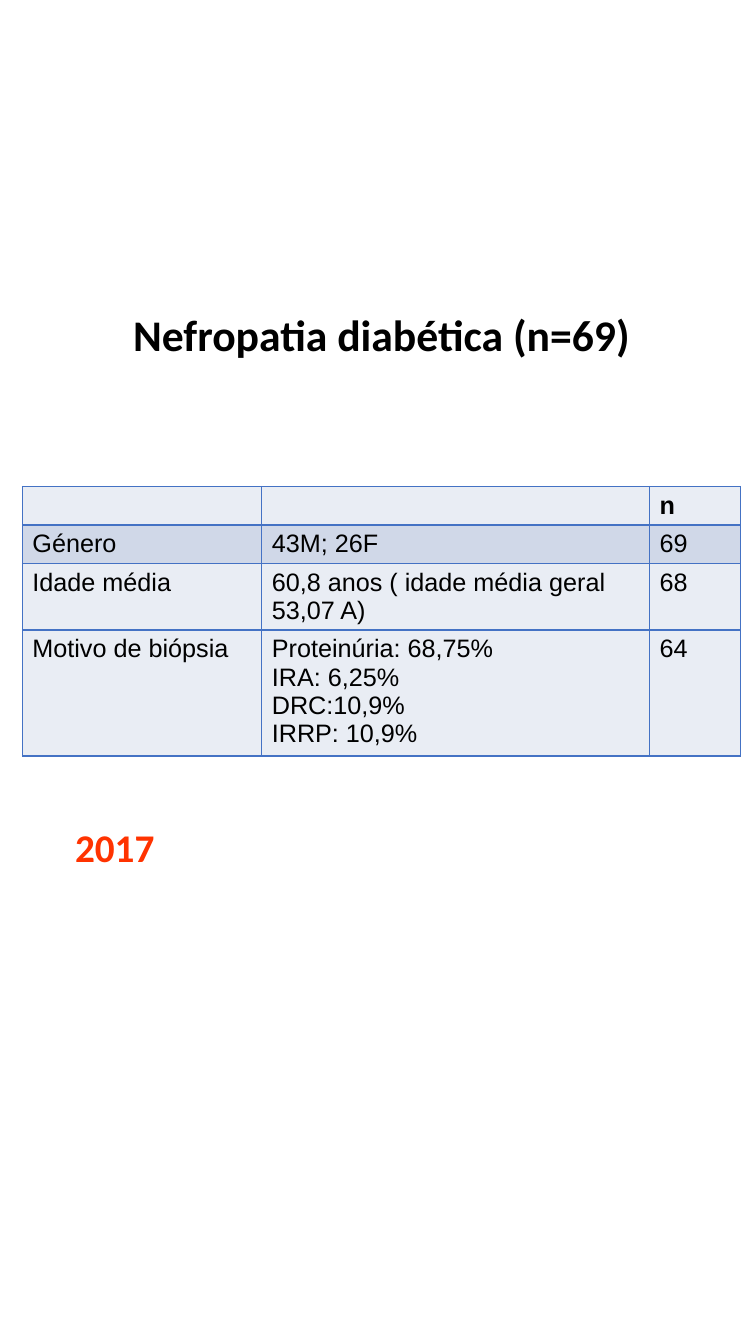
import pptx
import pptx.dml.color
import pptx.enum.text
import pptx.oxml
import pptx.oxml.ns
import pptx.util

Pt = pptx.util.Pt
PP_ALIGN = pptx.enum.text.PP_ALIGN
COLORS = {
    "text": "000000",
    "year": "FF3300",
    "border": "4472C4",
    "light": "E9EDF4",
    "band": "D0D8E8",
}


def rgb(name):
    return pptx.dml.color.RGBColor.from_string(COLORS[name])


def write(frame, text, font="Arial", size=18, color="text", bold=False,
          align=PP_ALIGN.LEFT, line_spacing=None):
    frame.word_wrap = True
    frame.text = text
    for paragraph in frame.paragraphs:
        paragraph.alignment = align
        paragraph.line_spacing = line_spacing
        paragraph.font.name = font
        paragraph.font.size = Pt(size)
        paragraph.font.bold = bold
        paragraph.font.color.rgb = rgb(color)


class ClinicalSlide:
    """Builds one slide in the heading, table and year style."""

    heading = {"font": "Calibri", "bold": True, "align": PP_ALIGN.CENTER}

    def __init__(self, presentation):
        self.slide = presentation.slides.add_slide(presentation.slide_layouts[5])

    def title(self, text, left, top, width, height):
        title = self.slide.shapes.title
        title.left, title.top = Pt(left), Pt(top)
        title.width, title.height = Pt(width), Pt(height)
        write(title.text_frame, text, size=31.2, line_spacing=0.9, **self.heading)
        title.text_frame.auto_size = pptx.enum.text.MSO_AUTO_SIZE.NONE
        title.text_frame.vertical_anchor = pptx.enum.text.MSO_ANCHOR.MIDDLE

    def year(self, text, left, top, width, height):
        box = self.slide.shapes.add_textbox(Pt(left), Pt(top), Pt(width), Pt(height))
        write(box.text_frame, text, size=28, color="year", **self.heading)
        box.text_frame.auto_size = pptx.enum.text.MSO_AUTO_SIZE.SHAPE_TO_FIT_TEXT

    def border(self, cell):
        properties = cell._tc.get_or_add_tcPr()
        for side in ("lnL", "lnR", "lnT", "lnB"):
            properties.append(pptx.oxml.parse_xml(
                f'<a:{side} {pptx.oxml.ns.nsdecls("a")} w="{Pt(1)}"><a:solidFill>'
                f'<a:srgbClr val="{COLORS["border"]}"/></a:solidFill></a:{side}>'))

    def table(self, rows, left, top, widths, heights):
        table = self.slide.shapes.add_table(
            len(rows), len(widths), Pt(left), Pt(top),
            Pt(sum(widths)), Pt(sum(heights))).table
        for column, width in zip(table.columns, widths):
            column.width = Pt(width)
        for row, height in zip(table.rows, heights):
            row.height = Pt(height)
        for row_index, row in enumerate(rows):
            for column_index, text in enumerate(row):
                cell = table.cell(row_index, column_index)
                write(cell.text_frame, text, bold=row_index == 0)
                self.border(cell)
                cell.fill.solid()
                cell.fill.fore_color.rgb = rgb("band" if row_index == 1 else "light")


def main():
    presentation = pptx.Presentation()
    presentation.slide_width, presentation.slide_height = Pt(540), Pt(960)
    slide = ClinicalSlide(presentation)
    slide.title("Nefropatia diabética (n=69)", 16, 189.5, 513, 103.5)
    slide.table(
        [
            ("", "", "n"),
            ("Género", "43M; 26F", "69"),
            ("Idade média", "60,8 anos ( idade média geral 53,07 A)", "68"),
            ("Motivo de biópsia",
             "Proteinúria: 68,75%\nIRA: 6,25%\nDRC:10,9%\nIRRP: 10,9%", "64"),
        ],
        16, 347.5, widths=(171, 277, 65), heights=(27.5, 27.5, 27.5, 90))
    slide.year("2017", 28, 584.5, 108, 41)
    presentation.save("out.pptx")


if __name__ == "__main__":
    main()
